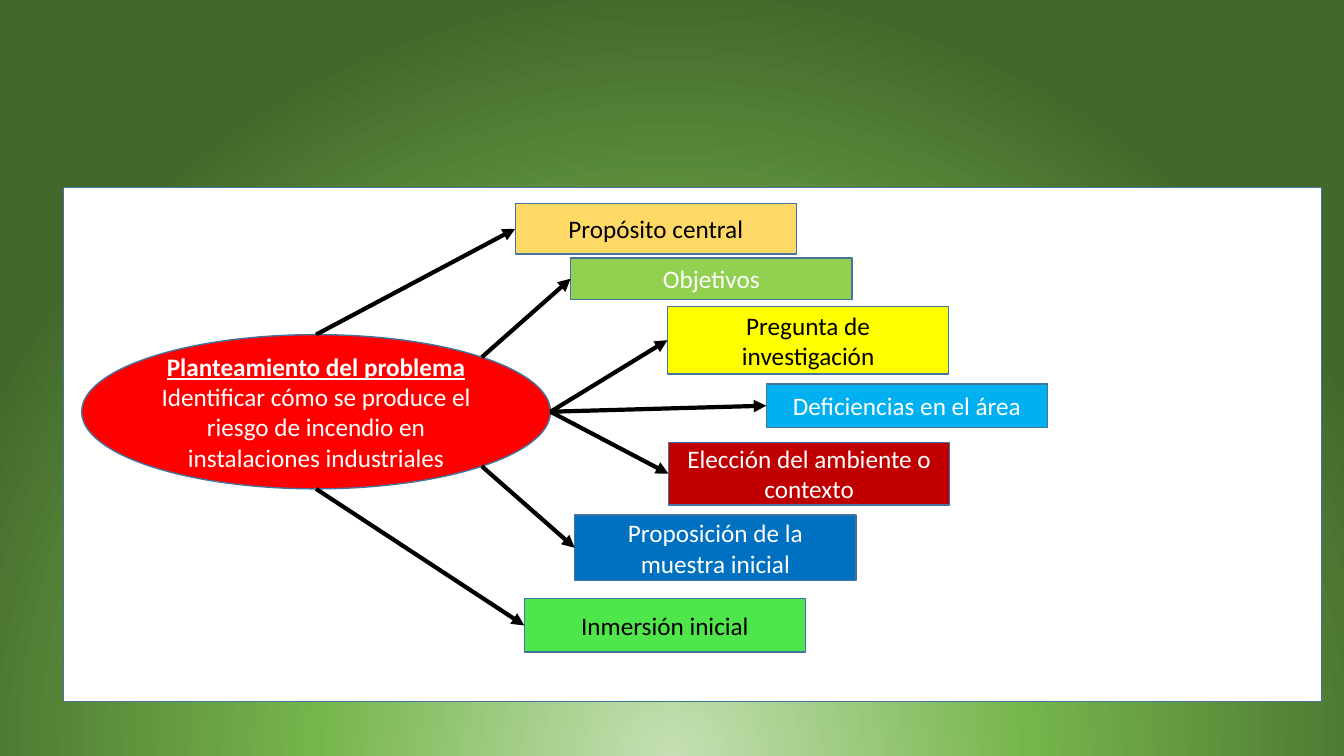
import math
from dataclasses import dataclass

import pptx
import pptx.dml.color
import pptx.enum.shapes
import pptx.enum.text
import pptx.oxml
import pptx.oxml.ns
import pptx.util
from lxml import etree

Inches = pptx.util.Inches
Pt = pptx.util.Pt
RGB = pptx.dml.color.RGBColor.from_string
SHAPE = pptx.enum.shapes.MSO_SHAPE
STRAIGHT = pptx.enum.shapes.MSO_CONNECTOR.STRAIGHT
qn = pptx.oxml.ns.qn


@dataclass(frozen=True)
class Theme:
    font: str = "Calibri"
    size: int = 18
    white: str = "FFFFFF"
    black: str = "000000"
    outline: str = "43739E"
    problem: str = "FF0000"
    outline_width: float = 1
    arrow_width: float = 3
    glow: tuple = ((0, "C5E0B4"), (46, "76B54C"), (100, "43682B"))


THEME = Theme()
TOP, TOP_RIGHT, RIGHT, BOTTOM_RIGHT, BOTTOM = 0, 7, 6, 5, 4  # ellipse connection sites
BRANCH_WIDTH = 2.79

# text, left and top within the panel, height, fill, text colour, ellipse site
BRANCHES = [
    ("Propósito central", 4.48, 0.16, 0.5, "FFD966", THEME.black, TOP),
    ("Objetivos", 5.03, 0.7, 0.41, "92D050", THEME.white, TOP_RIGHT),
    ("Pregunta de investigación", 5.99, 1.18, 0.67, "FFFF00", THEME.black, RIGHT),
    ("Deficiencias en el área", 6.97, 1.95, 0.43, "00B0F0", THEME.white, RIGHT),
    ("Elección del ambiente o contexto", 6, 2.53, 0.62, "C00000", THEME.white, RIGHT),
    ("Proposición de la muestra inicial", 5.07, 3.25, 0.65, "0070C0", THEME.white, BOTTOM_RIGHT),
    ("Inmersión inicial", 4.57, 4.08, 0.53, "4EE64A", THEME.black, BOTTOM),
]


def set_background(s):
    """Fill the slide with a circular glow centred below its bottom edge."""
    stops = "".join(
        f'<a:gs pos="{pos * 1000}"><a:srgbClr val="{color}"/></a:gs>'
        for pos, color in THEME.glow
    )
    bg = pptx.oxml.parse_xml(
        f'<p:bg {pptx.oxml.ns.nsdecls("p", "a")}><p:bgPr>'
        f'<a:gradFill rotWithShape="1"><a:gsLst>{stops}</a:gsLst><a:path path="circle">'
        '<a:fillToRect l="50000" t="130000" r="50000" b="-30000"/></a:path></a:gradFill>'
        '<a:effectLst/></p:bgPr></p:bg>'
    )
    s.element.find(qn("p:cSld")).insert(0, bg)


def add_box(s, kind, box, fill):
    sp = s.shapes.add_shape(kind, *map(Inches, box))
    sp.shadow.inherit = False
    sp.fill.solid()
    sp.fill.fore_color.rgb = RGB(fill)
    sp.line.color.rgb = RGB(THEME.outline)
    sp.line.width = Pt(THEME.outline_width)
    return sp


def write(sp, lines, color):
    """Write centred lines, each given as text and whether it is a heading."""
    tf = sp.text_frame
    tf.word_wrap = True
    tf.vertical_anchor = pptx.enum.text.MSO_ANCHOR.MIDDLE
    for i, (text, heading) in enumerate(lines):
        p = tf.add_paragraph() if i else tf.paragraphs[0]
        p.alignment = pptx.enum.text.PP_ALIGN.CENTER
        r = p.add_run()
        r.text = text
        r.font.name = THEME.font
        r.font.size = Pt(THEME.size)
        r.font.bold = r.font.underline = heading
        r.font.color.rgb = RGB(color)


def add_arrow(s, ellipse, site, target):
    """Join a site of the ellipse to the middle of the target's left side."""
    angle = math.radians(90 + 45 * site)
    x = ellipse.left + ellipse.width * (1 + math.cos(angle)) / 2
    y = ellipse.top + ellipse.height * (1 - math.sin(angle)) / 2
    cxn = s.shapes.add_connector(STRAIGHT, round(x), round(y), target.left, target.top)
    cxn.end_connect(target, 1)
    start = etree.Element(qn("a:stCxn"), id=str(ellipse.shape_id), idx=str(site))
    cxn.element.find(".//" + qn("p:cNvCxnSpPr")).insert(0, start)
    cxn.line.color.rgb = RGB(THEME.black)
    cxn.line.width = Pt(THEME.arrow_width)
    sp_pr = cxn.element.find(qn("p:spPr"))
    etree.SubElement(sp_pr.find(qn("a:ln")), qn("a:tailEnd"), type="triangle")
    etree.SubElement(sp_pr, qn("a:effectLst"))


def add_problem_map(s, left, top, width, height):
    add_box(s, SHAPE.RECTANGLE, (left, top, width, height), THEME.white)
    problem = add_box(s, SHAPE.OVAL, (left + 0.18, top + 1.46, 4.65, 1.53), THEME.problem)
    write(problem, [
        ("Planteamiento del problema", True),
        ("Identificar cómo se produce el riesgo de incendio en instalaciones industriales", False),
    ], THEME.white)
    for text, dx, dy, h, fill, color, site in BRANCHES:
        branch = add_box(s, SHAPE.RECTANGLE, (left + dx, top + dy, BRANCH_WIDTH, h), fill)
        write(branch, [(text, False)], color)
        add_arrow(s, problem, site, branch)


def main():
    prs = pptx.Presentation()
    prs.slide_width, prs.slide_height = Inches(13.33), Inches(7.5)
    s = prs.slides.add_slide(prs.slide_layouts[6])
    set_background(s)
    add_problem_map(s, 0.63, 1.86, 12.48, 5.1)
    prs.save("out.pptx")


if __name__ == "__main__":
    main()
